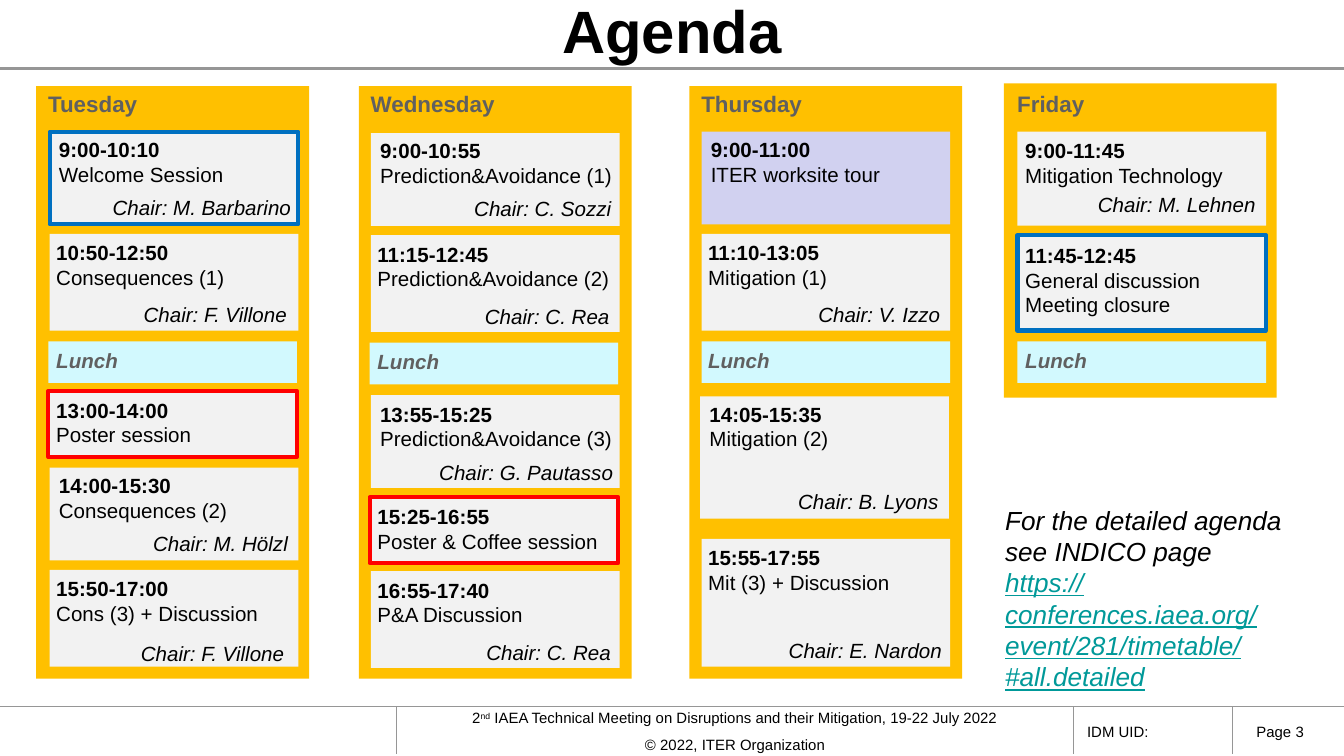
from dataclasses import dataclass

import pptx
import pptx.dml.color
import pptx.enum.shapes
import pptx.enum.text
import pptx.oxml.ns
import pptx.util
from lxml import etree

ALIGN = pptx.enum.text.PP_ALIGN
ANCHOR = pptx.enum.text.MSO_ANCHOR


@dataclass(frozen=True)
class Theme:
    font: str = "Arial"
    ink: str = "000000"
    muted: str = "606060"
    rule: str = "969696"
    panel: str = "FFC000"
    session: str = "F2F2F2"
    tour: str = "D1D1F0"
    lunch: str = "D2F9FE"
    plenary: str = "0070C0"
    poster: str = "FF0000"
    link: str = "009999"
    title_size: int = 32
    note_size: int = 14
    day_size: int = 12
    body_size: int = 11
    footer_size: int = 8
    frame_width: float = 2.25


@dataclass
class Session:
    top: int
    height: int
    time: str
    titles: tuple
    chair: tuple = ()  # name, left, top, width
    fill: str = Theme.session
    frame: str = ""
    indent: int = -5  # text box offset from the column of boxes
    lift: int = 0
    shift: int = 0  # box offset from the column of boxes


@dataclass
class Day:
    name: str
    name_box: tuple  # left, width
    panel: tuple  # left, top, height
    box_left: int
    text_width: int
    lunch: tuple  # left, top, text left
    sessions: list


class SlideBuilder:
    PX = 9144  # EMU; 100 px to the inch

    def __init__(self, slide, theme):
        self.slide = slide
        self.theme = theme

    def emu(self, *lengths):
        return [pptx.util.Emu(length * self.PX) for length in lengths]

    def color(self, value):
        return pptx.dml.color.RGBColor.from_string(value)

    def rect(self, box, fill, frame=""):
        shape = self.slide.shapes.add_shape(
            pptx.enum.shapes.MSO_SHAPE.RECTANGLE, *self.emu(*box))
        shape.shadow.inherit = False
        shape.fill.solid()
        shape.fill.fore_color.rgb = self.color(fill)
        if frame:
            shape.line.color.rgb = self.color(frame)
            shape.line.width = pptx.util.Pt(self.theme.frame_width)
        else:
            shape.line.fill.background()

    def rule(self, start, end, width=0.5):
        line = self.slide.shapes.add_connector(
            pptx.enum.shapes.MSO_CONNECTOR.STRAIGHT, *self.emu(*start, *end))
        line.line.color.rgb = self.color(self.theme.rule)
        line.line.width = pptx.util.Pt(width)
        etree.SubElement(line._element.spPr, pptx.oxml.ns.qn("a:effectLst"))

    def text(self, box, paragraphs, size, align=ALIGN.LEFT, anchor=ANCHOR.TOP,
             wrap=True, grow=True, inset=None, space=0):
        """Each paragraph is a list of (text, style) runs; "\\n" breaks the line."""
        frame = self.slide.shapes.add_textbox(*self.emu(*box)).text_frame
        frame.word_wrap = wrap
        fit = pptx.enum.text.MSO_AUTO_SIZE
        frame.auto_size = fit.SHAPE_TO_FIT_TEXT if grow else fit.NONE
        frame.vertical_anchor = anchor
        if inset:
            frame.margin_left, frame.margin_top = self.emu(*inset)
            frame.margin_right, frame.margin_bottom = self.emu(*inset)
        for index, runs in enumerate(paragraphs):
            paragraph = frame.add_paragraph() if index else frame.paragraphs[0]
            paragraph.alignment = align
            if index and space:
                paragraph.space_before = pptx.util.Pt(space)
            for words, style in runs:
                if words == "\n":
                    paragraph.add_line_break()
                else:
                    self.run(paragraph, words, size, **style)

    def run(self, paragraph, words, size, color=Theme.ink, bold=False,
            italic=False, underline=False, superscript=False):
        run = paragraph.add_run()
        run.text = words
        run.font.name = self.theme.font
        run.font.size = pptx.util.Pt(size)
        run.font.color.rgb = self.color(color)
        run.font.bold = bold
        run.font.italic = italic
        run.font.underline = underline
        if superscript:
            run._r.get_or_add_rPr().set("baseline", "30000")

    def session(self, day, session):
        size = self.theme.body_size
        self.rect((day.box_left + session.shift, session.top, 185, session.height),
                  session.fill, session.frame)
        first, *others = session.titles
        heading = [(session.time, {"bold": True}), ("\n", {}), (first, {})]
        self.text((day.box_left + session.indent, session.top + session.lift,
                   day.text_width, 47 + 19 * len(others)),
                  [heading] + [[(other, {})] for other in others], size)
        if session.chair:
            name, left, top, width = session.chair
            self.text((left, top, width, 29),
                      [[(f"Chair: {name}", {"italic": True})]], size, wrap=False)

    def day(self, day):
        left, top, height = day.panel
        name_left, name_width = day.name_box
        lunch_left, lunch_top, lunch_text_left = day.lunch
        muted = {"color": self.theme.muted, "bold": True}
        self.rect((left, top, 203, height), self.theme.panel)
        self.text((name_left, 62, name_width, 30), [[(day.name, muted)]],
                  self.theme.day_size, wrap=False)
        for session in day.sessions:
            self.session(day, session)
        self.rect((lunch_left, lunch_top, 185, 31), self.theme.lunch)
        self.text((lunch_text_left, lunch_top, 202, 29),
                  [[("Lunch", {**muted, "italic": True})]], self.theme.body_size)


DAYS = [
    Day("Tuesday", (26, 87), (27, 64, 441), 37, 187, (36, 254, 32), [
        Session(98, 69, "9:00-10:10", ("Welcome Session",),
                ("M. Barbarino", 74, 140, 154), frame=Theme.plenary, indent=-3, lift=-1),
        Session(174, 72, "10:50-12:50", ("Consequences (1)",), ("F. Villone", 97, 220, 130)),
        Session(291, 49, "13:00-14:00", ("Poster session",), frame=Theme.poster, shift=-1),
        Session(348, 69, "14:00-15:30", ("Consequences (2)",),
                ("M. Hölzl", 104, 390, 121), indent=-3, lift=-1),
        Session(424, 72, "15:50-17:00", ("Cons (3) + Discussion",),
                ("F. Villone", 95, 472, 130)),
    ]),
    Day("Wednesday", (266, 113), (267, 64, 441), 276, 196, (275, 255, 271), [
        Session(99, 69, "9:00-10:55", ("Prediction&Avoidance (1)",),
                ("C. Sozzi", 343, 141, 123), indent=-3, lift=-1),
        Session(175, 72, "11:15-12:45", ("Prediction&Avoidance (2)",),
                ("C. Rea", 351, 221, 114)),
        Session(294, 69, "13:55-15:25", ("Prediction&Avoidance (3)",),
                ("G. Pautasso", 317, 337, 150), indent=-3),
        Session(370, 49, "15:25-16:55", ("Poster & Coffee session",),
                frame=Theme.poster, shift=-1),
        Session(425, 72, "16:55-17:40", ("P&A Discussion",), ("C. Rea", 352, 471, 114)),
    ]),
    Day("Thursday", (512, 96), (513, 64, 441), 522, 195, (522, 254, 517), [
        Session(98, 69, "9:00-11:00", ("ITER worksite tour",),
                fill=Theme.tour, indent=-3, lift=-1),
        Session(174, 72, "11:10-13:05", ("Mitigation (1)",), ("V. Izzo", 599, 220, 113)),
        Session(295, 91, "14:05-15:35", ("Mitigation (2)",),
                ("B. Lyons", 584, 359, 128), indent=-4, lift=-1, shift=-1),
        Session(401, 95, "15:55-17:55", ("Mit (3) + Discussion",),
                ("E. Nardon", 577, 470, 135)),
    ]),
    Day("Friday", (747, 71), (747, 62, 234), 757, 202, (757, 254, 753), [
        Session(98, 70, "9:00-11:45", ("Mitigation Technology",),
                ("M. Lehnen", 807, 138, 138), indent=-4),
        Session(175, 71, "11:45-12:45", ("General discussion", "Meeting closure"),
                frame=Theme.plenary, indent=-4, lift=1),
    ]),
]


def main():
    theme = Theme()
    deck = pptx.Presentation()
    deck.slide_width = pptx.util.Inches(10)
    deck.slide_height = deck.slide_width * 9 // 16
    builder = SlideBuilder(deck.slides.add_slide(deck.slide_layouts[6]), theme)

    # Footer
    builder.text((295, 527, 504, 34), [
        [("2", {}), ("nd", {"superscript": True}),
         (" IAEA Technical Meeting on Disruptions and their Mitigation, "
          "19-22 July 2022", {})],
        [("© 2022, ITER Organization", {})],
    ], theme.footer_size, ALIGN.CENTER, ANCHOR.MIDDLE, inset=(4, 0), space=4.5)
    for label, left, width in (("IDM UID:", 799, 122), ("Page 3", 925, 64)):
        builder.text((left, 532, width, 24), [[(label, {})]],
                     theme.footer_size, anchor=ANCHOR.MIDDLE)
    builder.rule((0, 526), (1000, 526))
    for x in (295, 799, 917):
        builder.rule((x, 526), (x, 561))

    # Title
    builder.rule((0, 51), (1000, 51), 1.25)
    builder.text((0, 0, 1000, 44), [[("Agenda", {"bold": True})]],
                 theme.title_size, ALIGN.CENTER, ANCHOR.MIDDLE, grow=False)

    # Day columns
    for day in DAYS:
        builder.day(day)

    # Pointer to the full agenda
    builder.text((738, 370, 232, 128), [
        [("For the detailed agenda see INDICO page", {"italic": True})],
        [("https://conferences.iaea.org/event/281/timetable/#all.detailed",
          {"color": theme.link, "italic": True, "underline": True})],
    ], theme.note_size)

    deck.save("out.pptx")


if __name__ == "__main__":
    main()
